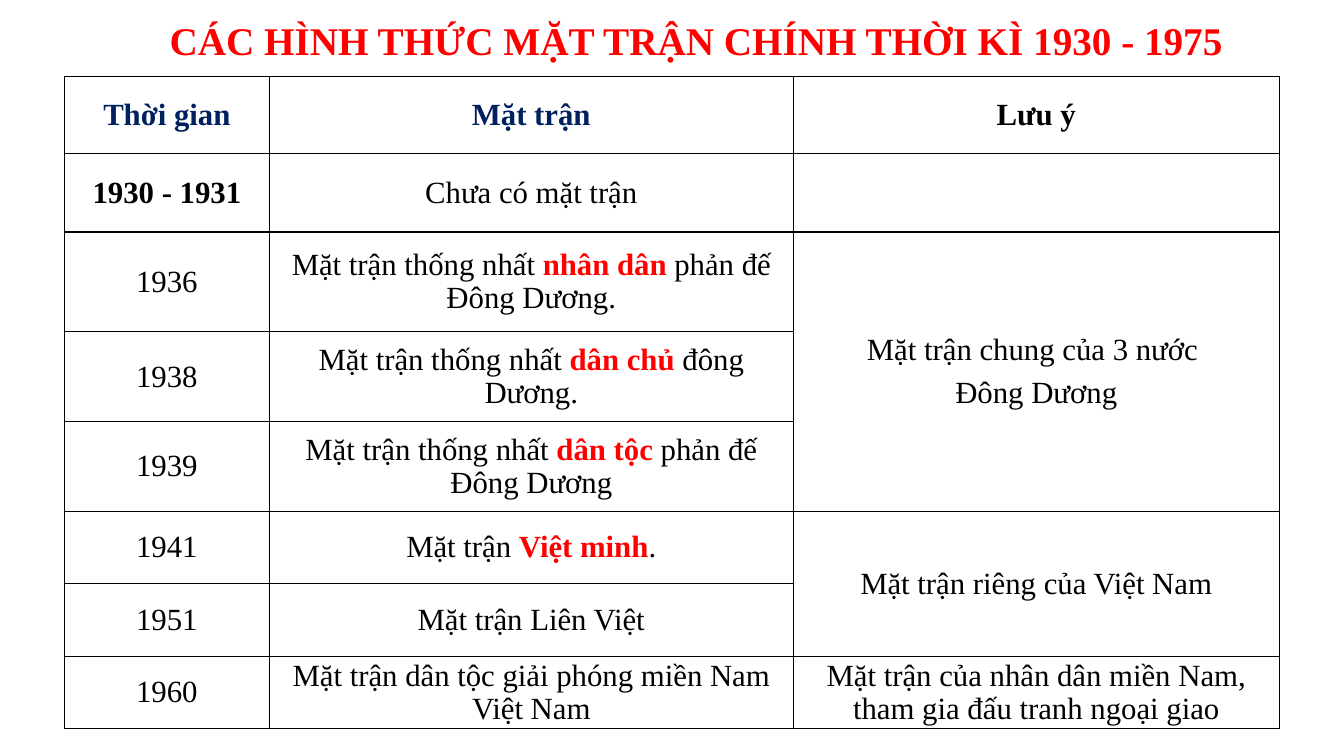
"""Build a slide that tabulates the united fronts of 1930 - 1975."""
from dataclasses import dataclass

from lxml.etree import SubElement
from pptx import Presentation
from pptx.dml.color import RGBColor
from pptx.enum.text import MSO_ANCHOR, PP_ALIGN
from pptx.oxml.ns import qn
from pptx.util import Pt

RED = RGBColor(0xFF, 0, 0)
NAVY = RGBColor(0, 0x20, 0x60)
BLACK = RGBColor(0, 0, 0)
FACE = "Times New Roman"
WIDTHS = (146.2, 374.4, 347)
HEIGHTS = (54.7, 56.2, 71.3, 64.1, 64.1, 51.8, 51.8, 51.8)
CELL = {"margin_left": Pt(5), "margin_right": Pt(5), "margin_top": Pt(0.7),
        "margin_bottom": Pt(0), "vertical_anchor": MSO_ANCHOR.MIDDLE}
PARA = {"alignment": PP_ALIGN.CENTER, "space_after": Pt(8), "line_spacing": 0.96}


@dataclass
class Entry:
    """Hold one cell; text between asterisks is bold red."""
    row: int
    col: int
    text: str
    color: RGBColor = BLACK
    bold: bool = False
    span: int = 1


ENTRIES = (
    Entry(0, 0, "Thời gian", NAVY, True),
    Entry(0, 1, "Mặt trận", NAVY, True),
    Entry(0, 2, "Lưu ý", bold=True),
    Entry(1, 0, "1930 - 1931", bold=True),
    Entry(1, 1, "Chưa có mặt trận"),
    Entry(2, 0, "1936"),
    Entry(2, 1, "Mặt trận thống nhất *nhân dân *phản đế Đông Dương."),
    Entry(2, 2, "Mặt trận chung của 3 nước \nĐông Dương", span=3),
    Entry(3, 0, "1938"),
    Entry(3, 1, "Mặt trận thống nhất *dân chủ *đông Dương."),
    Entry(4, 0, "1939"),
    Entry(4, 1, "Mặt trận thống nhất *dân tộc *phản đế Đông Dương"),
    Entry(5, 0, "1941"),
    Entry(5, 1, "Mặt trận *Việt minh*."),
    Entry(5, 2, "Mặt trận riêng của Việt Nam", span=2),
    Entry(6, 0, "1951"),
    Entry(6, 1, "Mặt trận Liên Việt"),
    Entry(7, 0, "1960"),
    Entry(7, 1, "Mặt trận dân tộc giải phóng miền Nam Việt Nam"),
    Entry(7, 2, "Mặt trận của nhân dân miền Nam, tham gia đấu tranh ngoại giao"),
)


def format_all(item: object, values: dict) -> None:
    """Set each named attribute on the item."""
    for name, value in values.items():
        setattr(item, name, value)


def add_run(para: object, text: str, size: float, color: RGBColor, bold: bool) -> None:
    """Append a styled run to the paragraph."""
    run = para.add_run()
    run.text = text
    format_all(run.font, {"name": FACE, "size": Pt(size), "bold": bold})
    run.font.color.rgb = color


def add_border(cell: object) -> None:
    """Clear the fill and draw a black line on every side of the cell."""
    props = cell._tc.get_or_add_tcPr()
    for side in ("lnL", "lnR", "lnT", "lnB"):
        line = SubElement(props, qn(f"a:{side}"), w=str(Pt(1)))
        fill = SubElement(line, qn("a:solidFill"))
        SubElement(fill, qn("a:srgbClr"), val=str(BLACK))
    cell.fill.background()


def fill_cell(table: object, entry: Entry) -> None:
    """Merge the cell as needed and write its paragraphs."""
    cell = table.cell(entry.row, entry.col)
    if entry.span > 1:
        cell.merge(table.cell(entry.row + entry.span - 1, entry.col))
    for index, line in enumerate(entry.text.split("\n")):
        frame = cell.text_frame
        para = frame.add_paragraph() if index else frame.paragraphs[0]
        format_all(para, PARA)
        for part, text in enumerate(line.split("*")):
            strong = part % 2 == 1
            add_run(para, text, 22, RED if strong else entry.color, strong or entry.bold)


def add_grid(slide: object) -> None:
    """Add the table of fronts."""
    frame = slide.shapes.add_table(len(HEIGHTS), len(WIDTHS), Pt(46.1), Pt(54.9),
                                   Pt(sum(WIDTHS)), Pt(sum(HEIGHTS)))
    table = frame.table
    format_all(table, {"first_row": False, "horz_banding": False})
    for col, width in zip(table.columns, WIDTHS):
        col.width = Pt(width)
    for row, height in zip(table.rows, HEIGHTS):
        row.height = Pt(height)
    for cell in table.iter_cells():
        format_all(cell, CELL)
        add_border(cell)
    for entry in ENTRIES:
        fill_cell(table, entry)


def add_title(slide: object) -> None:
    """Add the red heading."""
    box = slide.shapes.add_textbox(Pt(80.6), Pt(7.9), Pt(833), Pt(41))
    box.text_frame.word_wrap = True
    para = box.text_frame.paragraphs[0]
    para.alignment = PP_ALIGN.CENTER
    add_run(para, "CÁC HÌNH THỨC MẶT TRẬN CHÍNH THỜI KÌ 1930 - 1975", 28, RED, True)


def main() -> None:
    """Build and save the slide."""
    deck = Presentation()
    format_all(deck, {"slide_width": Pt(960), "slide_height": Pt(540)})
    slide = deck.slides.add_slide(deck.slide_layouts[6])
    add_grid(slide)
    add_title(slide)
    deck.save("out.pptx")


if __name__ == "__main__":
    main()
